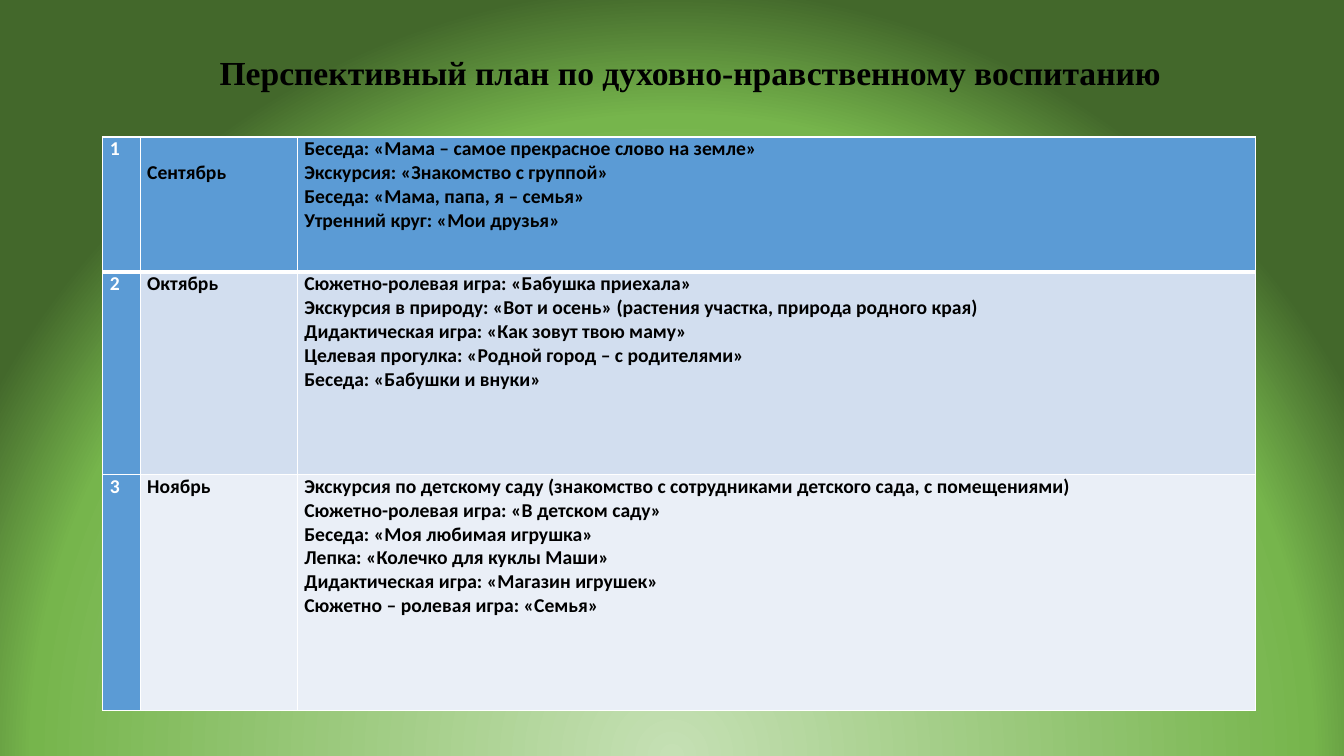
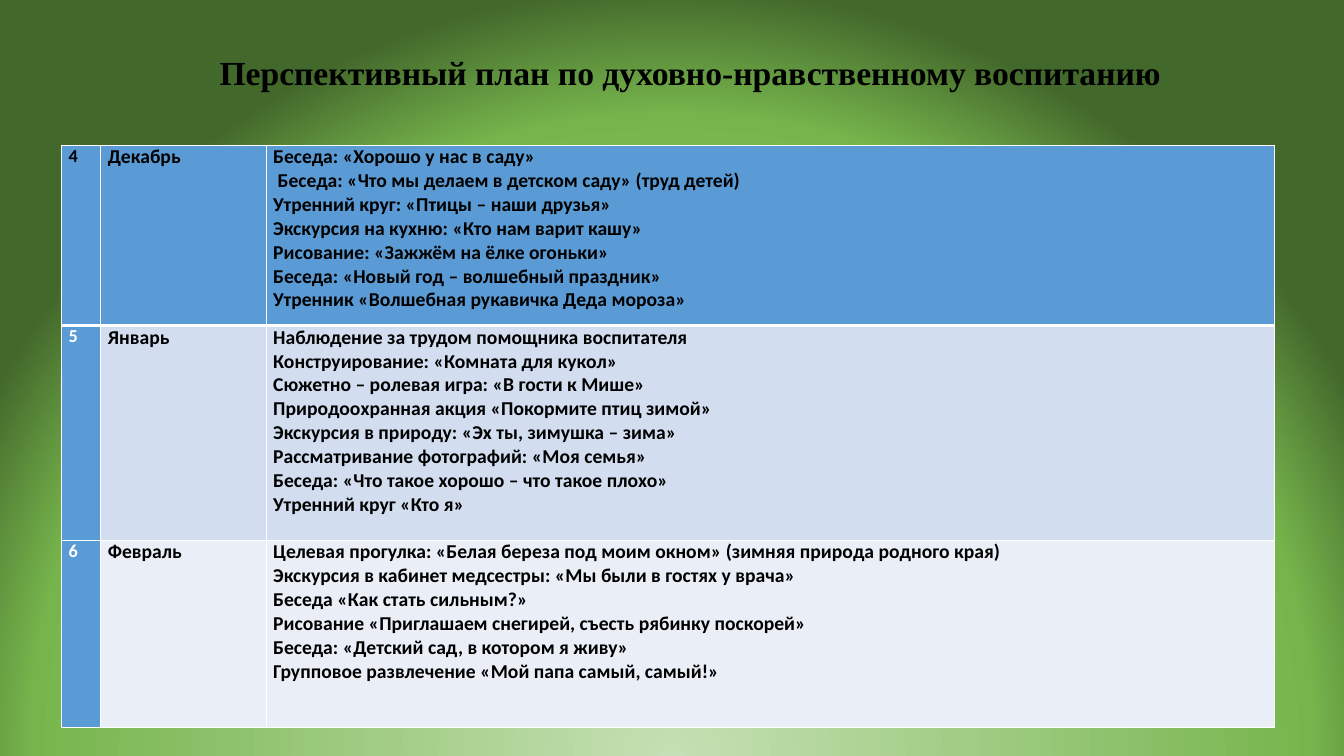
import pptx
import pptx.dml.color
import pptx.enum.text
import pptx.oxml
import pptx.oxml.ns
import pptx.util
from lxml import etree

WIDTH, HEIGHT = pptx.util.Inches(13.33), pptx.util.Inches(7.5)
TITLE = "Перспективный план по духовно-нравственному воспитанию"
TITLE_BOX = (9.38, 6.13, 83.95, 12.13)  # percent of the slide
TITLE_FONT, BODY_FONT = "Times New Roman", "Calibri"
BLACK, WHITE, BLUE = "000000", "FFFFFF", "5B9BD5"
ROW_FILLS = (BLUE, "D2DEEF", "EAEFF7")
GRADIENT = ((0, "C5E0B4"), (83, "76B54C"), (100, "43682B"))
COLUMN_WEIGHTS = (0.39, 1.64, 10)
TEXT_SIZE = 14
LINE = pptx.util.Pt(TEXT_SIZE * 1.22)
SIDE_MARGIN = pptx.util.Inches(0.07)

PLANS = [
    {
        "box": (7.65, 18.13, 85.75, 75.87),
        "row_weights": (1.34, 2.01, 2.34),
        "number_size": 14,
        "first_number_color": WHITE,
        "lines_above_first_month": 1,
        "months": [
            ("1", "Сентябрь", [
                "Беседа: «Мама – самое прекрасное слово на земле»",
                "Экскурсия: «Знакомство с группой»",
                "Беседа: «Мама, папа, я – семья»",
                "Утренний круг: «Мои друзья»",
            ]),
            ("2", "Октябрь", [
                "Сюжетно-ролевая игра: «Бабушка приехала»",
                "Экскурсия в природу: «Вот и осень» (растения участка, природа родного края)",
                "Дидактическая игра: «Как зовут твою маму»",
                "Целевая прогулка: «Родной город – с родителями»",
                "Беседа: «Бабушки и внуки»",
            ]),
            ("3", "Ноябрь", [
                "Экскурсия по детскому саду (знакомство с сотрудниками детского сада, с помещениями)",
                "Сюжетно-ролевая игра: «В детском саду»",
                "Беседа: «Моя любимая игрушка»",
                "Лепка: «Колечко для куклы Маши»",
                "Дидактическая игра: «Магазин игрушек»",
                "Сюжетно – ролевая игра: «Семья»",
            ]),
        ],
    },
    {
        "box": (4.58, 19.2, 90.25, 77.07),
        "row_weights": (1.79, 2.13, 1.86),
        "number_size": 13,
        "first_number_color": BLACK,
        "lines_above_first_month": 0,
        "months": [
            ("4", "Декабрь", [
                "Беседа: «Хорошо у нас в саду»",
                " Беседа: «Что мы делаем в детском саду» (труд детей)",
                "Утренний круг: «Птицы – наши друзья»",
                "Экскурсия на кухню: «Кто нам варит кашу»",
                "Рисование: «Зажжём на ёлке огоньки»",
                "Беседа: «Новый год – волшебный праздник»",
                "Утренник «Волшебная рукавичка Деда мороза»",
            ]),
            ("5", "Январь", [
                "Наблюдение за трудом помощника воспитателя",
                "Конструирование: «Комната для кукол»",
                "Сюжетно – ролевая игра: «В гости к Мише»",
                "Природоохранная акция «Покормите птиц зимой»",
                "Экскурсия в природу: «Эх ты, зимушка – зима»",
                "Рассматривание фотографий: «Моя семья»",
                "Беседа: «Что такое хорошо – что такое плохо»",
                "Утренний круг «Кто я»",
            ]),
            ("6", "Февраль", [
                "Целевая прогулка: «Белая береза под моим окном» (зимняя природа родного края)",
                "Экскурсия в кабинет медсестры: «Мы были в гостях у врача»",
                "Беседа «Как стать сильным?»",
                "Рисование «Приглашаем снегирей, съесть рябинку поскорей»",
                "Беседа: «Детский сад, в котором я живу»",
                "Групповое развлечение «Мой папа самый, самый!»",
            ]),
        ],
    },
]


def rgb(color):
    return pptx.dml.color.RGBColor.from_string(color)


def place(box):
    """Turn percentages of the slide into left, top, width and height."""
    return [int(side * share / 100)
            for side, share in zip((WIDTH, HEIGHT, WIDTH, HEIGHT), box)]


def add_run(p, text, font, size, color):
    r = p.add_run()
    r.text = text
    r.font.name, r.font.size, r.font.bold = font, pptx.util.Pt(size), True
    r.font.color.rgb = rgb(color)


def set_background(master):
    master.background.fill.gradient()
    old = master.element.find(".//" + pptx.oxml.ns.qn("p:bgPr"))[0]
    stops = "".join(f'<a:gs pos="{pos * 1000}"><a:srgbClr val="{color}"/></a:gs>'
                    for pos, color in GRADIENT)
    new = pptx.oxml.parse_xml(
        f'<a:gradFill {pptx.oxml.ns.nsdecls("a")} rotWithShape="1">'
        f'<a:gsLst>{stops}</a:gsLst><a:path path="circle">'
        '<a:fillToRect l="50000" t="130000" r="50000" b="-30000"/>'
        '</a:path></a:gradFill>')
    old.getparent().replace(old, new)


def set_title(s):
    sp = s.shapes.title
    sp.left, sp.top, sp.width, sp.height = place(TITLE_BOX)
    tf = sp.text_frame
    tf.word_wrap = True
    tf.auto_size = pptx.enum.text.MSO_AUTO_SIZE.NONE
    tf.vertical_anchor = pptx.enum.text.MSO_ANCHOR.TOP
    tf.margin_top = pptx.util.Inches(0.1)
    p = tf.paragraphs[0]
    p.alignment = pptx.enum.text.PP_ALIGN.CENTER
    p.line_spacing = 0.9
    add_run(p, TITLE, TITLE_FONT, 24, BLACK)


def set_borders(cell, top, bottom):
    tc_pr = cell._tc.get_or_add_tcPr()
    for side, points in (("L", 1), ("R", 1), ("T", top), ("B", bottom)):
        ln = etree.SubElement(tc_pr, pptx.oxml.ns.qn(f"a:ln{side}"),
                              w=str(pptx.util.Pt(points)))
        fill = etree.SubElement(ln, pptx.oxml.ns.qn("a:solidFill"))
        etree.SubElement(fill, pptx.oxml.ns.qn("a:srgbClr"), val=WHITE)


def fill_cell(cell, lines, fill, size=TEXT_SIZE, color=BLACK, lines_above=0):
    cell.fill.solid()
    cell.fill.fore_color.rgb = rgb(fill)
    cell.margin_left = cell.margin_right = SIDE_MARGIN
    cell.margin_top, cell.margin_bottom = lines_above * LINE, 0
    tf = cell.text_frame
    for i, line in enumerate(lines):
        p = tf.add_paragraph() if i else tf.paragraphs[0]
        add_run(p, line, BODY_FONT, size, color)


def share_out(total, weights):
    return [int(total * weight / sum(weights)) for weight in weights]


def add_plan_table(s, plan):
    left, top, width, height = place(plan["box"])
    months = plan["months"]
    table = s.shapes.add_table(len(months), len(COLUMN_WEIGHTS),
                               left, top, width, height).table
    table.first_row = table.horz_banding = False
    for column, size in zip(table.columns, share_out(width, COLUMN_WEIGHTS)):
        column.width = size
    for row, size in zip(table.rows, share_out(height, plan["row_weights"])):
        row.height = size
    for i, (number, month, activities) in enumerate(months):
        cells = table.rows[i].cells
        for cell in cells:
            set_borders(cell, 3 if i == 1 else 1, 3 if i == 0 else 1)
        number_cell, month_cell, activity_cell = cells
        fill_cell(number_cell, [number], BLUE, plan["number_size"],
                  WHITE if i else plan["first_number_color"])
        fill_cell(month_cell, [month], ROW_FILLS[i],
                  lines_above=0 if i else plan["lines_above_first_month"])
        fill_cell(activity_cell, activities, ROW_FILLS[i])


def add_plan_slide(prs, plan):
    s = prs.slides.add_slide(prs.slide_layouts.get_by_name("Title Only"))
    set_title(s)
    add_plan_table(s, plan)


def main():
    prs = pptx.Presentation()
    prs.slide_width, prs.slide_height = WIDTH, HEIGHT
    set_background(prs.slide_master)
    for plan in PLANS:
        add_plan_slide(prs, plan)
    prs.save("out.pptx")


if __name__ == "__main__":
    main()
